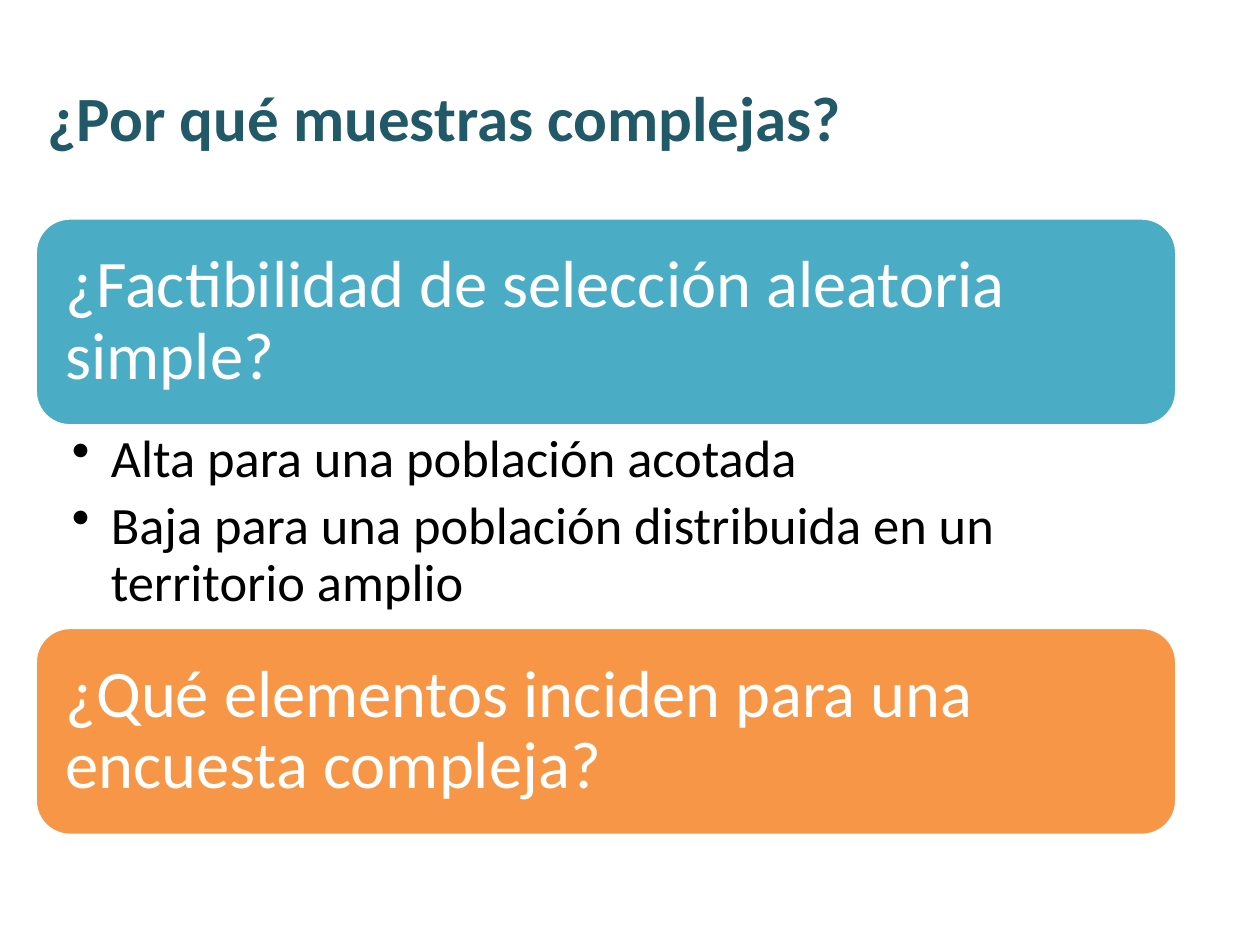
import pptx
import pptx.util
import pptx.dml.color
import pptx.enum.shapes
import pptx.enum.text
import lxml.etree
import pptx.oxml.ns

LEFT, WIDTH = 0.28, 9.06
TOP, BAND_H, LIST_H = 1.73, 1.65, 1.6
INCH = pptx.util.Inches
MIDDLE = pptx.enum.text.MSO_ANCHOR.MIDDLE


def color(hex_code):
    return pptx.dml.color.RGBColor.from_string(hex_code)


def set_frame(tf, left, top, right, bottom, anchor):
    """Set wrapping, insets in inches and vertical anchor."""
    tf.word_wrap = True
    tf.margin_left, tf.margin_top = INCH(left), INCH(top)
    tf.margin_right, tf.margin_bottom = INCH(right), INCH(bottom)
    tf.vertical_anchor = anchor


def add_bullet(p, indent):
    pPr = p._p.get_or_add_pPr()
    pPr.set("marL", str(INCH(indent)))
    pPr.set("indent", str(-INCH(indent)))
    bullet = lxml.etree.SubElement(pPr, pptx.oxml.ns.qn("a:buChar"))
    bullet.set("char", "•")


def write(p, text, size, fill, bold=False, spacing=None, after=0):
    p.alignment = pptx.enum.text.PP_ALIGN.LEFT
    p.line_spacing = spacing
    p.space_after = pptx.util.Pt(after)
    r = p.add_run()
    r.text = text
    r.font.name = "Calibri"
    r.font.size = pptx.util.Pt(size)
    r.font.bold = bold
    r.font.color.rgb = color(fill)


def add_title(s, text):
    sp = s.shapes.add_textbox(INCH(LEFT), INCH(0.3), INCH(8.98), INCH(1.25))
    set_frame(sp.text_frame, 0.1, 0.05, 0.1, 0.05, MIDDLE)
    write(sp.text_frame.paragraphs[0], text, 36, "215968", bold=True)


def add_band(s, top, text, fill):
    sp = s.shapes.add_shape(pptx.enum.shapes.MSO_SHAPE.ROUNDED_RECTANGLE,
                            INCH(LEFT), INCH(top), INCH(WIDTH), INCH(BAND_H))
    sp.shadow.inherit = False
    sp.fill.solid()
    sp.fill.fore_color.rgb = color(fill)
    sp.line.color.rgb = color("FFFFFF")
    sp.line.width = pptx.util.Pt(2)
    # The preset insets its text by its corner radius, so the margins are small.
    set_frame(sp.text_frame, 0.16, 0.16, 0.16, 0.16, MIDDLE)
    write(sp.text_frame.paragraphs[0], text, 38, "FFFFFF", spacing=0.9)


def add_list(s, top, items):
    sp = s.shapes.add_textbox(INCH(LEFT), INCH(top), INCH(WIDTH), INCH(LIST_H))
    tf = sp.text_frame
    set_frame(tf, 0.29, 0.05, 0.3, 0.05, pptx.enum.text.MSO_ANCHOR.TOP)
    for i, item in enumerate(items):
        p = tf.add_paragraph() if i else tf.paragraphs[0]
        add_bullet(p, 0.31)
        write(p, item, 30, "000000", spacing=0.9, after=6)


def main():
    prs = pptx.Presentation()
    prs.slide_width, prs.slide_height = INCH(10), INCH(7.5)
    s = prs.slides.add_slide(prs.slide_layouts[6])
    add_title(s, "¿Por qué muestras complejas?")
    add_band(s, TOP, "¿Factibilidad de selección aleatoria simple?", "4BACC6")
    add_list(s, TOP + BAND_H, [
        "Alta para una población acotada",
        "Baja para una población distribuida en un territorio amplio",
    ])
    add_band(s, TOP + BAND_H + LIST_H,
             "¿Qué elementos inciden para una encuesta compleja?", "F79646")
    prs.save("out.pptx")


if __name__ == "__main__":
    main()
